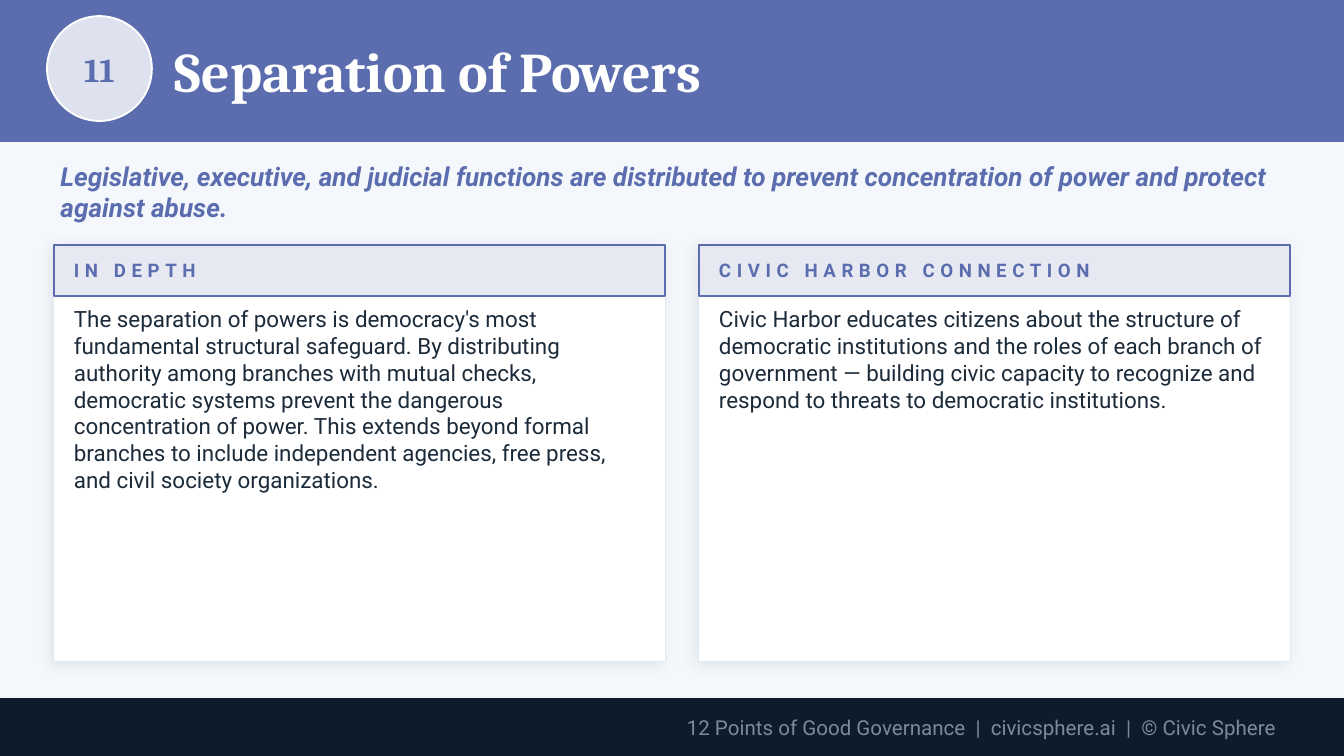
from pptx import Presentation
from pptx import util as u
from pptx.dml.color import RGBColor
from pptx.enum import shapes, text
from pptx.oxml import parse_xml
from pptx.oxml.ns import nsdecls, qn

BLUE = RGBColor(0x5B, 0x6D, 0xAE)
WHITE = RGBColor(0xFF, 0xFF, 0xFF)
PALE = RGBColor(0xF4, 0xF7, 0xFB)
EDGE = RGBColor(0xE0, 0xE8, 0xF0)
INK = RGBColor(0x1C, 0x2B, 0x3A)
NAVY = RGBColor(0x0D, 0x1B, 0x2A)
GREY = RGBColor(0x7A, 0x8B, 0xA0)

RECT = shapes.MSO_SHAPE.RECTANGLE
OVAL = shapes.MSO_SHAPE.OVAL
TOP = text.MSO_ANCHOR.TOP
MID = text.MSO_ANCHOR.MIDDLE
LEFT = text.PP_ALIGN.LEFT
CENTER = text.PP_ALIGN.CENTER
RIGHT = text.PP_ALIGN.RIGHT

# Left edge, width, body width, heading, body text
CARDS = [
    (0.4, 4.55, 4.25, "IN DEPTH",
     "The separation of powers is democracy's most fundamental structural "
     "safeguard. By distributing authority among branches with mutual checks, "
     "democratic systems prevent the dangerous concentration of power. This "
     "extends beyond formal branches to include independent agencies, free "
     "press, and civil society organizations."),
    (5.2, 4.4, 4.1, "CIVIC HARBOR CONNECTION",
     "Civic Harbor educates citizens about the structure of democratic "
     "institutions and the roles of each branch of government — building "
     "civic capacity to recognize and respond to threats to democratic "
     "institutions."),
]


def add_box(slide, kind, at, fill, line, width=1, alpha=None):
    box = slide.shapes.add_shape(kind, *map(u.Inches, at))
    box.shadow.inherit = False
    box.fill.solid()
    box.fill.fore_color.rgb = fill
    box.line.color.rgb = line
    box.line.width = u.Pt(width)
    if alpha is not None:
        tint = box.element.spPr.find(qn("a:solidFill")).find(qn("a:srgbClr"))
        tint.append(parse_xml(
            f'<a:alpha {nsdecls("a")} val="{alpha * 1000}"/>'))
    return box


def add_shade(box):
    box.element.spPr.find(qn("a:effectLst")).append(parse_xml(
        f'<a:outerShdw {nsdecls("a")} blurRad="{u.Pt(8)}" dist="{u.Pt(2)}" '
        f'dir="{135 * 60000}" algn="bl" rotWithShape="0">'
        '<a:srgbClr val="000000"><a:alpha val="8000"/></a:srgbClr>'
        '</a:outerShdw>'))


def set_text(shape, words, size, color, face="Roboto", bold=False,
             italic=False, align=LEFT, anchor=MID, gap=0):
    frame = shape.text_frame
    frame.word_wrap = True
    frame.auto_size = text.MSO_AUTO_SIZE.NONE
    frame.vertical_anchor = anchor
    frame.margin_left = frame.margin_right = 0
    frame.margin_top = frame.margin_bottom = 0
    para = frame.paragraphs[0]
    para.alignment = align
    run = para.add_run()
    run.text = words
    font = para.font
    font.name, font.size, font.color.rgb = face, u.Pt(size), color
    font.bold, font.italic = bold, italic
    if gap:
        run.font._element.set("spc", str(gap * 100))


def add_text(slide, at, words, size, color, **style):
    box = slide.shapes.add_textbox(*map(u.Inches, at))
    set_text(box, words, size, color, **style)


def add_title(slide, at, words):
    title = slide.shapes.title
    title.left, title.top, title.width, title.height = map(u.Inches, at)
    set_text(title, words, 30, WHITE, face="Cambria", bold=True)
    # Bring the title in front of the header band
    title.element.getparent().append(title.element)


def add_card(slide, left, width, span, head, body):
    top, inset = 1.82, left + 0.15
    add_shade(add_box(slide, RECT, (left, top, width, 3.1), WHITE, EDGE, 0.5))
    add_box(slide, RECT, (left, top, width, 0.38), BLUE, BLUE, alpha=15)
    add_text(slide, (inset, 1.85, width - 0.3, 0.32), head, 10, BLUE,
             bold=True, gap=3)
    add_text(slide, (inset, 2.27, span, 2.55), body, 12, INK, anchor=TOP)


def main():
    deck = Presentation()
    # Widescreen, 16:9
    deck.slide_width = u.Inches(10)
    deck.slide_height = deck.slide_width * 9 // 16
    slide = deck.slides.add_slide(deck.slide_layouts[5])
    slide.background.fill.solid()
    slide.background.fill.fore_color.rgb = PALE

    # Header band with number badge
    add_box(slide, RECT, (0, 0, 10, 1.05), BLUE, BLUE)
    badge = (0.35, 0.12, 0.78, 0.78)
    add_box(slide, OVAL, badge, WHITE, WHITE, alpha=80)
    add_text(slide, badge, "11", 18, BLUE, face="Cambria", bold=True,
             align=CENTER)
    add_title(slide, (1.3, 0.1, 8.3, 0.85), "Separation of Powers")

    # Key statement
    add_text(slide, (0.45, 1.15, 9.1, 0.55),
             "Legislative, executive, and judicial functions are distributed "
             "to prevent concentration of power and protect against abuse.",
             14, BLUE, bold=True, italic=True)

    # Cards
    for card in CARDS:
        add_card(slide, *card)

    # Footer
    add_box(slide, RECT, (0, 5.2, 10, 0.42), NAVY, NAVY)
    add_text(slide, (0.5, 5.22, 9, 0.38),
             "12 Points of Good Governance  |  civicsphere.ai  |  "
             "© Civic Sphere", 11, GREY, align=RIGHT)

    deck.save("out.pptx")


if __name__ == "__main__":
    main()
